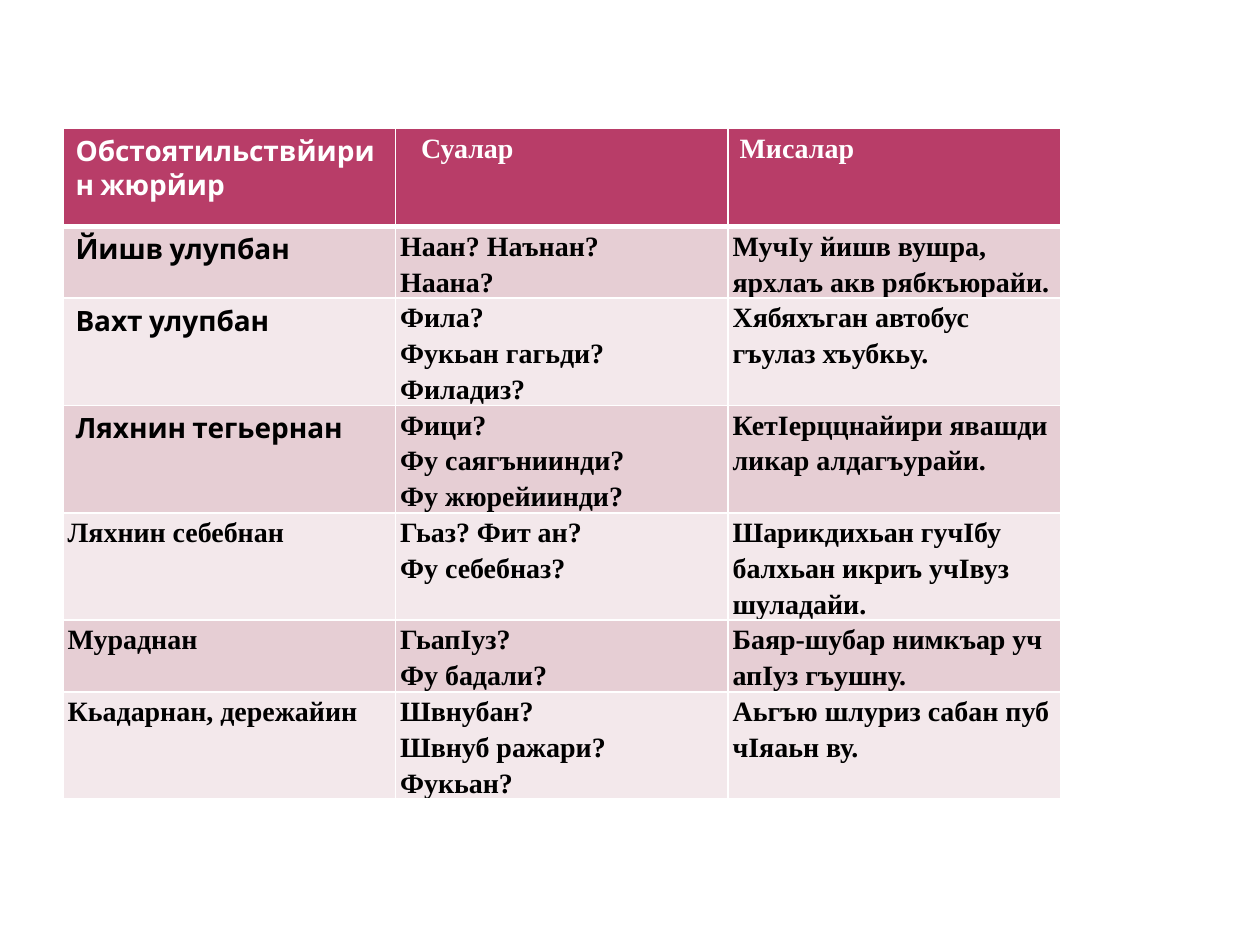
from lxml import etree
from pptx import Presentation
from pptx import util as u
from pptx.dml.color import RGBColor
from pptx.oxml.ns import qn

COLOURS = {
    "header": "B83D68",
    "odd": "E6CED4",
    "even": "F3E8EB",
    "white": "FFFFFF",
    "black": "000000",
}
HEADING_FONT, BODY_FONT = "Cabin", "Times New Roman"
TIGHT_MARGIN = 2.7
HEADER_INDENTS = [0, 12, 4]

# Each cell is a list of paragraphs
ROWS = [
    [["Обстоятильствйирин жюрйир"], ["Суалар"], ["Мисалар"]],
    [["Йишв улупбан"], ["Наан? Наънан?", "Наана?"],
     ["МучIу йишв вушра, ярхлаъ акв рябкъюрайи."]],
    [["Вахт улупбан"], ["Фила?", "Фукьан гагьди?", "Филадиз?"],
     ["Хябяхъган автобус гъулаз хъубкьу."]],
    [["Ляхнин тегьернан"],
     ["Фици?", "Фу саягъниинди?", "Фу жюрейиинди?"],
     ["КетIерццнайири явашди ликар алдагъурайи."]],
    [["Ляхнин себебнан"], ["Гьаз? Фит ан?", "Фу себебназ?"],
     ["Шарикдихьан гучIбу балхьан икриъ учIвуз шуладайи."]],
    [["Мураднан"], ["ГьапIуз?", "Фу бадали?"],
     ["Баяр-шубар нимкъар уч апIуз гъушну."]],
    [["Кьадарнан, дережайин"],
     ["Швнубан?", "Швнуб ражари?", "Фукьан?"],
     ["Аьгъю шлуриз сабан пуб чIяаьн ву."]],
]


def colour(name):
    return RGBColor.from_string(COLOURS[name])


def set_borders(cell, top, bottom):
    """Draw white cell borders; the widths are in points."""
    properties = cell._tc.get_or_add_tcPr()
    widths = {"lnL": 1, "lnR": 1, "lnT": top, "lnB": bottom}
    for position, (side, width) in enumerate(widths.items()):
        line = etree.Element(qn(f"a:{side}"), w=str(u.Pt(width)))
        fill = etree.SubElement(line, qn("a:solidFill"))
        etree.SubElement(fill, qn("a:srgbClr"), val=COLOURS["white"])
        properties.insert(position, line)


def write_cell(cell, lines, font_name, text_colour, indent):
    """Fill a cell with bold paragraphs; body-font cells are set tight."""
    tight = font_name == BODY_FONT
    if tight:
        cell.margin_left = u.Pt(TIGHT_MARGIN + indent)
        cell.margin_right = u.Pt(TIGHT_MARGIN)
        cell.margin_top = cell.margin_bottom = u.Pt(0)
    frame = cell.text_frame
    for index, line in enumerate(lines):
        para = frame.add_paragraph() if index else frame.paragraphs[0]
        if tight:
            para.line_spacing = 1.15
        span = para.add_run()
        span.text = line
        span.font.name = font_name
        span.font.size = u.Pt(16)
        span.font.bold = True
        span.font.color.rgb = colour(text_colour)


def add_adverbial_table(page):
    frame = page.shapes.add_table(len(ROWS), 3, u.Pt(36), u.Pt(73.5),
                                  u.Pt(570), u.Pt(431))
    table = frame.table
    for row_index, cells in enumerate(ROWS):
        header = row_index == 0
        table.rows[row_index].height = u.Pt(56 if header else 29.2)
        band = "header" if header else ("odd" if row_index % 2 else "even")
        for column, lines in enumerate(cells):
            cell = table.cell(row_index, column)
            cell.fill.solid()
            cell.fill.fore_color.rgb = colour(band)
            # The first four row labels use the heading font
            label = column == 0 and row_index < 4
            write_cell(cell, lines, HEADING_FONT if label else BODY_FONT,
                       "white" if header else "black",
                       HEADER_INDENTS[column] if header else 0)
            set_borders(cell, top=3 if row_index == 1 else 1,
                        bottom=3 if header else 1)
    # Rows grow with their text, so the frame is taller than their minimum
    frame.height = u.Pt(431)


def main():
    deck = Presentation()
    deck.slide_width, deck.slide_height = u.Pt(720), u.Pt(540)
    page = deck.slides.add_slide(deck.slide_layouts[6])
    add_adverbial_table(page)
    deck.save("out.pptx")


if __name__ == "__main__":
    main()
